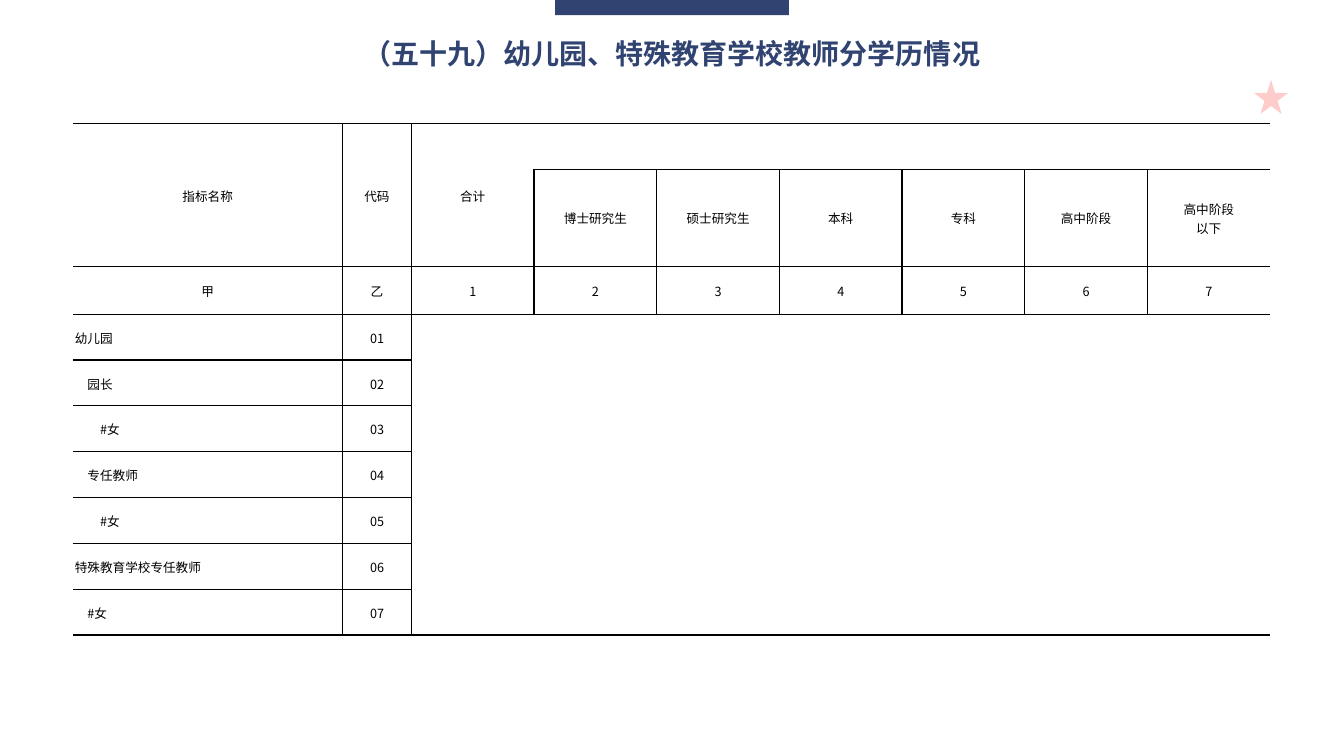
from lxml import etree
from pptx import Presentation
from pptx.dml.color import RGBColor
from pptx.enum.shapes import MSO_SHAPE
from pptx.enum.text import MSO_ANCHOR, MSO_AUTO_SIZE, PP_ALIGN
from pptx.oxml.ns import qn
from pptx.util import Pt

STAR, RECTANGLE = MSO_SHAPE.STAR_5_POINT, MSO_SHAPE.RECTANGLE
CENTER, JUSTIFY = PP_ALIGN.CENTER, PP_ALIGN.JUSTIFY
MIDDLE, GROW = MSO_ANCHOR.MIDDLE, MSO_AUTO_SIZE.SHAPE_TO_FIT_TEXT

NAVY, BLACK, RED = "304371", "000000", "FF0000"
LATIN, CHINESE = "Times New Roman", "Noto Sans CJK SC"
NO_STYLE = "{2D5ABB26-0587-4C30-8999-92F81FD0307C}"

COLUMN_WIDTHS = [192.7, 49.2] + [87.63] * 7
ROW_HEIGHTS = [32.5, 69.3, 34.2] + [32.75] * 7
MERGED_HEADINGS = ["指标名称", "代码", "合计"]
DEGREES = ["博士研究生", "硕士研究生", "本科", "专科", "高中阶段", "高中阶段\n以下"]
COLUMN_MARKS = ["甲", "乙", "1", "2", "3", "4", "5", "6", "7"]
# Row label split into spans, with its indent level
INDICATORS = [
    (["幼儿园"], 0),
    (["园长"], 1),
    (["#", "女"], 2),
    (["专任教师"], 1),
    (["#", "女"], 2),
    (["特殊教育学校专任教师"], 0),
    (["#", "女"], 1),
]


def color(value):
    return RGBColor.from_string(value)


def set_values(target, values):
    for name, value in values.items():
        setattr(target, name, value)


def add_span(para, text, font, size, shade, bold=False):
    span = para.add_run()
    span.text = text
    set_values(span.font, {"name": font, "size": Pt(size), "bold": bold})
    span.font.color.rgb = color(shade)
    east_asian = etree.SubElement(span.font._element, qn("a:ea"))
    east_asian.set("typeface", CHINESE)


def add_plain_shape(page, kind, box, shade):
    shape = page.shapes.add_shape(kind, *map(Pt, box))
    shape.shadow.inherit = False
    shape.fill.solid()
    shape.fill.fore_color.rgb = color(shade)
    shape.line.fill.background()
    return shape


def add_decoration(page, star_box, bar_box):
    star = add_plain_shape(page, STAR, star_box, RED)
    shade = star.fill._xPr.find(".//" + qn("a:srgbClr"))
    etree.SubElement(shade, qn("a:alpha")).set("val", "20000")
    add_plain_shape(page, RECTANGLE, bar_box, NAVY)


def add_title(page, box, text):
    frame = page.shapes.add_textbox(*map(Pt, box)).text_frame
    set_values(frame, {"word_wrap": False, "auto_size": GROW})
    para = frame.paragraphs[0]
    para.alignment = CENTER
    add_span(para, text, "Arial", 20, NAVY, True)


def write_cell(cell, lines, alignment=CENTER, level=0):
    """Each line is a list of spans."""
    frame = cell.text_frame
    for number, spans in enumerate(lines):
        para = frame.add_paragraph() if number else frame.paragraphs[0]
        set_values(para, {"alignment": alignment, "line_spacing": Pt(14)})
        if level:
            para._p.get_or_add_pPr().set("indent", str(Pt(9 * level)))
        for text in spans:
            add_span(para, text, CHINESE if text.isascii() else LATIN, 9, BLACK)


def rule_on_left(row, column):
    return column in (1, 2) or (2 < column < len(COLUMN_WIDTHS) and row in (1, 2))


def rule_on_top(row, column):
    return row <= 3 or column < 2 or row == len(ROW_HEIGHTS)


def draw_borders(cell, row, column):
    sides = {
        "a:lnL": rule_on_left(row, column),
        "a:lnR": rule_on_left(row, column + 1),
        "a:lnT": rule_on_top(row, column),
        "a:lnB": rule_on_top(row + 1, column),
    }
    properties = cell._tc.get_or_add_tcPr()
    for place, (side, visible) in enumerate(sides.items()):
        line = etree.Element(qn(side), w=str(Pt(1)))
        if visible:
            fill = etree.SubElement(line, qn("a:solidFill"))
            etree.SubElement(fill, qn("a:srgbClr")).set("val", BLACK)
        else:
            etree.SubElement(line, qn("a:noFill"))
        properties.insert(place, line)


def add_teacher_table(page, left, top):
    size = (len(ROW_HEIGHTS), len(COLUMN_WIDTHS))
    box = (left, top, sum(COLUMN_WIDTHS), sum(ROW_HEIGHTS))
    table = page.shapes.add_table(*size, *map(Pt, box)).table
    set_values(table, {"first_row": False, "horz_banding": False})
    table._tbl.tblPr.find(qn("a:tableStyleId")).text = NO_STYLE
    for column, width in zip(table.columns, COLUMN_WIDTHS):
        column.width = Pt(width)
    for row, height in zip(table.rows, ROW_HEIGHTS):
        row.height = Pt(height)

    # Headings
    for column, text in enumerate(MERGED_HEADINGS):
        table.cell(0, column).merge(table.cell(1, column))
        write_cell(table.cell(0, column), [[text]])
    for column, text in enumerate(DEGREES, len(MERGED_HEADINGS)):
        write_cell(table.cell(1, column), [[line] for line in text.split("\n")])
    for column, text in enumerate(COLUMN_MARKS):
        write_cell(table.cell(2, column), [[text]])

    # Indicators and their codes
    for number, (spans, level) in enumerate(INDICATORS, 1):
        write_cell(table.cell(number + 2, 0), [spans], JUSTIFY, level)
        write_cell(table.cell(number + 2, 1), [[f"{number:02}"]])

    # Cell format
    layout = {"vertical_anchor": MIDDLE, "margin_left": Pt(1.5),
              "margin_right": Pt(1.5), "margin_top": 0, "margin_bottom": 0}
    for row in range(size[0]):
        for column in range(size[1]):
            cell = table.cell(row, column)
            set_values(cell, layout)
            cell.fill.background()
            if not cell.is_spanned:
                draw_borders(cell, row, column)


def main():
    deck = Presentation()
    set_values(deck, {"slide_width": Pt(960), "slide_height": Pt(540)})
    page = deck.slides.add_slide(deck.slide_layouts[6])
    add_decoration(page, (895.7, 57, 24.5, 24.5), (396.5, -0.7, 167, 11.5))
    add_title(page, (250.5, 22.3, 458.6, 31.7), "（五十九）幼儿园、特殊教育学校教师分学历情况")
    add_teacher_table(page, 52, 88.5)
    deck.save("out.pptx")


if __name__ == "__main__":
    main()
